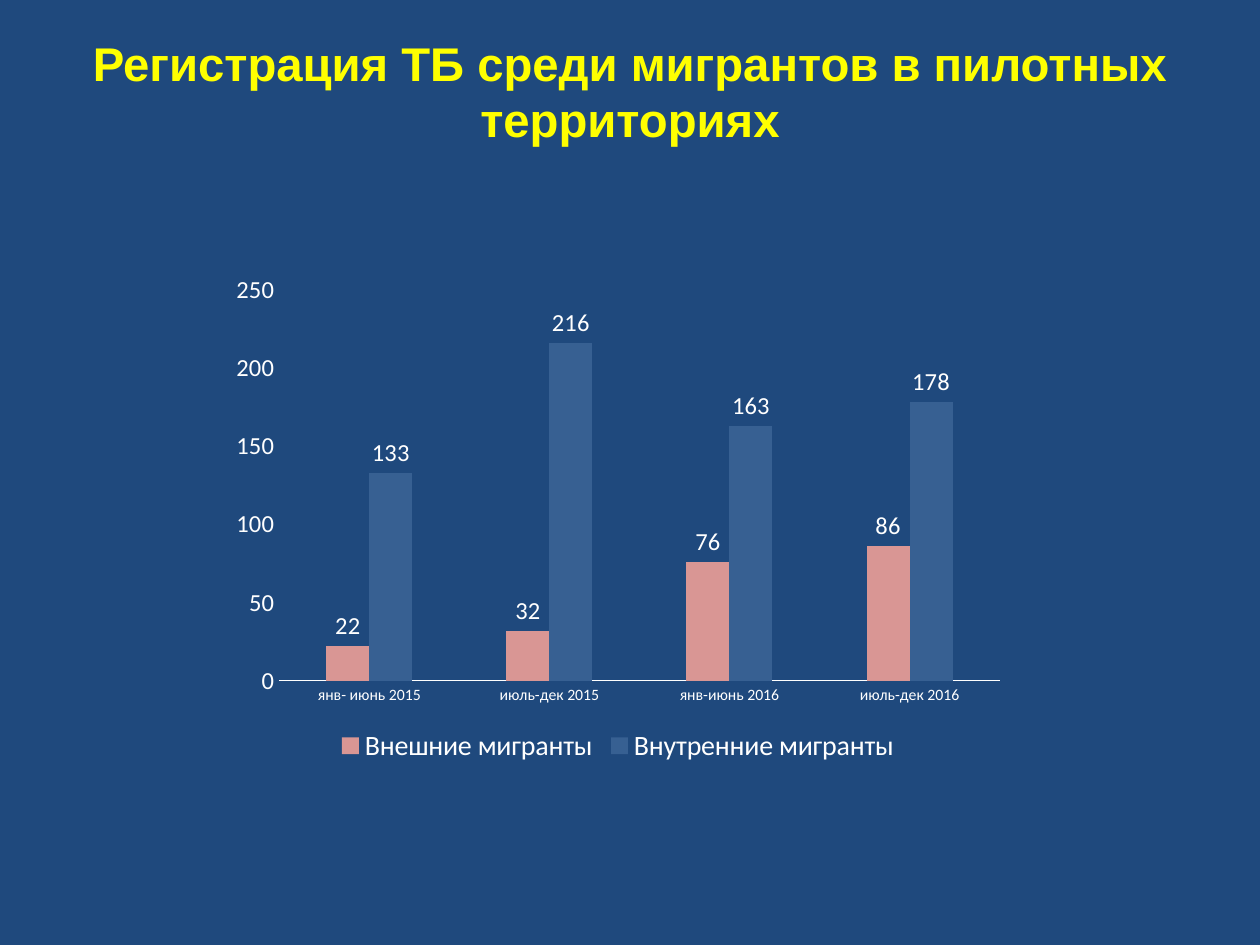
import pptx
import pptx.chart.data
import pptx.dml.color
import pptx.enum.chart
import pptx.enum.text
import pptx.util

Pt = pptx.util.Pt
enum = pptx.enum.chart
colors = {
    "back": "1F497D",
    "title": "FFFF00",
    "text": "FFFFFF",
    "outer": "D99694",
    "inner": "376092",
}


def paint(fill, name):
    fill.solid()
    fill.fore_color.rgb = pptx.dml.color.RGBColor.from_string(colors[name])


def style(font, size, color="text", face="Calibri", bold=False):
    font.size = Pt(size)
    font.name = face
    font.bold = bold
    paint(font.fill, color)


deck = pptx.Presentation()
deck.slide_width, deck.slide_height = Pt(720), Pt(540)
slide = deck.slides.add_slide(deck.slide_layouts[5])
paint(slide.background.fill, "back")

# Title, kept in the upper part of its box by the bottom inset
title = slide.shapes.title
title.left, title.top, title.width, title.height = Pt(36), Pt(21.6), Pt(648), Pt(90)
frame = title.text_frame
frame.word_wrap = True
frame.auto_size = pptx.enum.text.MSO_AUTO_SIZE.NONE
frame.vertical_anchor = pptx.enum.text.MSO_ANCHOR.MIDDLE
frame.margin_left = frame.margin_right = Pt(4.5)
frame.margin_top, frame.margin_bottom = Pt(2.25), Pt(32)
para = frame.paragraphs[0]
para.alignment = pptx.enum.text.PP_ALIGN.CENTER
run = para.add_run()
run.text = "Регистрация ТБ среди мигрантов в пилотных территориях"
style(run.font, 27, "title", "Arial", True)

# Chart
data = pptx.chart.data.CategoryChartData()
data.categories = ["янв- июнь 2015", "июль-дек 2015", "янв-июнь 2016", "июль-дек 2016"]
data.add_series("Внешние мигранты", [22, 32, 76, 86])
data.add_series("Внутренние мигранты", [133, 216, 163, 178])
chart = slide.shapes.add_chart(
    enum.XL_CHART_TYPE.COLUMN_CLUSTERED, Pt(126), Pt(151.2), Pt(454.3), Pt(288), data
).chart
chart.has_title = False
style(chart.font, 10)

plot = chart.plots[0]
plot.gap_width = 219
plot.overlap = 0
plot.vary_by_categories = False
for series, color in zip(plot.series, ["outer", "inner"]):
    paint(series.format.fill, color)
    labels = series.data_labels
    labels.show_value = True
    labels.position = enum.XL_LABEL_POSITION.OUTSIDE_END
    style(labels.font, 14)

for axis, size in [(chart.category_axis, 9), (chart.value_axis, 14)]:
    axis.has_major_gridlines = False
    axis.major_tick_mark = axis.minor_tick_mark = enum.XL_TICK_MARK.NONE
    style(axis.tick_labels.font, size)
line = chart.category_axis.format.line
paint(line.fill, "text")
line.width = Pt(0.75)
chart.value_axis.format.line.fill.background()
chart.value_axis.minimum_scale = 0
chart.value_axis.maximum_scale = 250
chart.value_axis.major_unit = 50

chart.has_legend = True
chart.legend.position = enum.XL_LEGEND_POSITION.BOTTOM
chart.legend.include_in_layout = False
style(chart.legend.font, 16)

deck.save("out.pptx")
